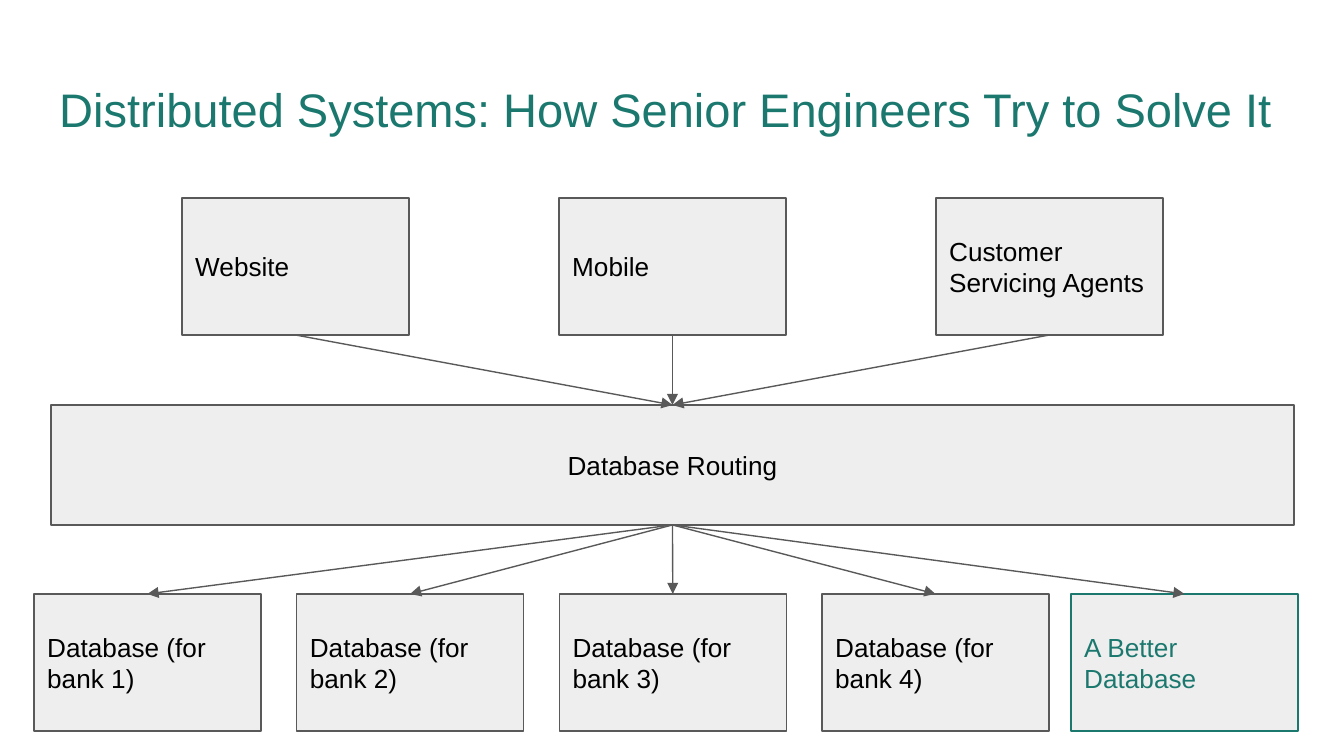
import pptx
import pptx.dml.color
import pptx.enum.shapes
import pptx.enum.text
import pptx.util
from lxml import etree
from pptx.oxml.ns import qn

PX = 914400 / 134.4
FONT = "Arial"
TEAL = pptx.dml.color.RGBColor(0x1B, 0x78, 0x6E)
PALE = pptx.dml.color.RGBColor(0xEE, 0xEE, 0xEE)
GREY = pptx.dml.color.RGBColor(0x59, 0x59, 0x59)
BLACK = pptx.dml.color.RGBColor(0, 0, 0)
LEFT = pptx.enum.text.PP_ALIGN.LEFT
CENTER = pptx.enum.text.PP_ALIGN.CENTER

NODE_WIDTH, NODE_HEIGHT = 227, 137


def emu(px):
    return pptx.util.Emu(round(px * PX))


def write(shape, text, size, color, align=LEFT):
    frame = shape.text_frame
    frame.word_wrap = True
    frame.vertical_anchor = pptx.enum.text.MSO_ANCHOR.MIDDLE
    frame.margin_left = frame.margin_right = pptx.util.Inches(0.1)
    frame.margin_top = frame.margin_bottom = pptx.util.Inches(0.1)
    para = frame.paragraphs[0]
    para.alignment = align
    span = para.add_run()
    span.text = text
    span.font.name = FONT
    span.font.size = pptx.util.Pt(size)
    span.font.color.rgb = color


def add_title(page, box, text):
    write(page.shapes.add_textbox(*map(emu, box)), text, 25.2, TEAL)


def add_node(page, box, text, line=GREY, color=BLACK, align=LEFT):
    node = page.shapes.add_shape(
        pptx.enum.shapes.MSO_SHAPE.RECTANGLE, *map(emu, box))
    node.shadow.inherit = False
    node.fill.solid()
    node.fill.fore_color.rgb = PALE
    node.line.color.rgb = line
    node.line.width = pptx.util.Pt(0.75)
    write(node, text, 14, color, align)
    return node


def add_row(page, box, labels):
    """Spread equal nodes from the left edge to the right edge of the box."""
    left, top, width, height = box
    step = (width - NODE_WIDTH) / (len(labels) - 1)
    return [add_node(page, (left + i * step, top, NODE_WIDTH, height), label)
            for i, label in enumerate(labels)]


def add_arrow(page, upper, lower):
    """Point from the bottom middle of one node to the top middle of another."""
    arrow = page.shapes.add_connector(
        pptx.enum.shapes.MSO_CONNECTOR.STRAIGHT, 0, 0, 0, 0)
    arrow.begin_connect(upper, 2)
    arrow.end_connect(lower, 0)
    arrow.line.color.rgb = GREY
    arrow.line.width = pptx.util.Pt(0.75)
    etree.SubElement(arrow.line._get_or_add_ln(), qn("a:tailEnd"),
                     type="triangle")
    etree.SubElement(arrow._element.spPr, qn("a:effectLst"))


def add_diagram(page, box):
    """Clients above the router, databases below it."""
    left, top, width, height = box
    bottom_row = top + height - NODE_HEIGHT
    clients = add_row(page, (left + 148, top, 981, NODE_HEIGHT),
                      ["Website", "Mobile", "Customer Servicing Agents"])
    databases = add_row(page, (left, bottom_row, 1015, NODE_HEIGHT),
                        [f"Database (for bank {n})" for n in range(1, 5)])
    databases.append(add_node(
        page, (left + width - NODE_WIDTH, bottom_row, NODE_WIDTH, NODE_HEIGHT),
        "A Better Database", TEAL, TEAL))
    router = add_node(page, (left + 17, top + 207, 1243, 120),
                      "Database Routing", align=CENTER)
    for client in clients:
        add_arrow(page, client, router)
    for database in databases:
        add_arrow(page, router, database)


def main():
    deck = pptx.Presentation()
    deck.slide_width, deck.slide_height = emu(1344), emu(756)
    page = deck.slides.add_slide(deck.slide_layouts[6])
    add_title(page, (46, 66, 1252, 85),
              "Distributed Systems: How Senior Engineers Try to Solve It")
    add_diagram(page, (34, 198, 1264, 533))
    deck.save("out.pptx")


if __name__ == "__main__":
    main()
